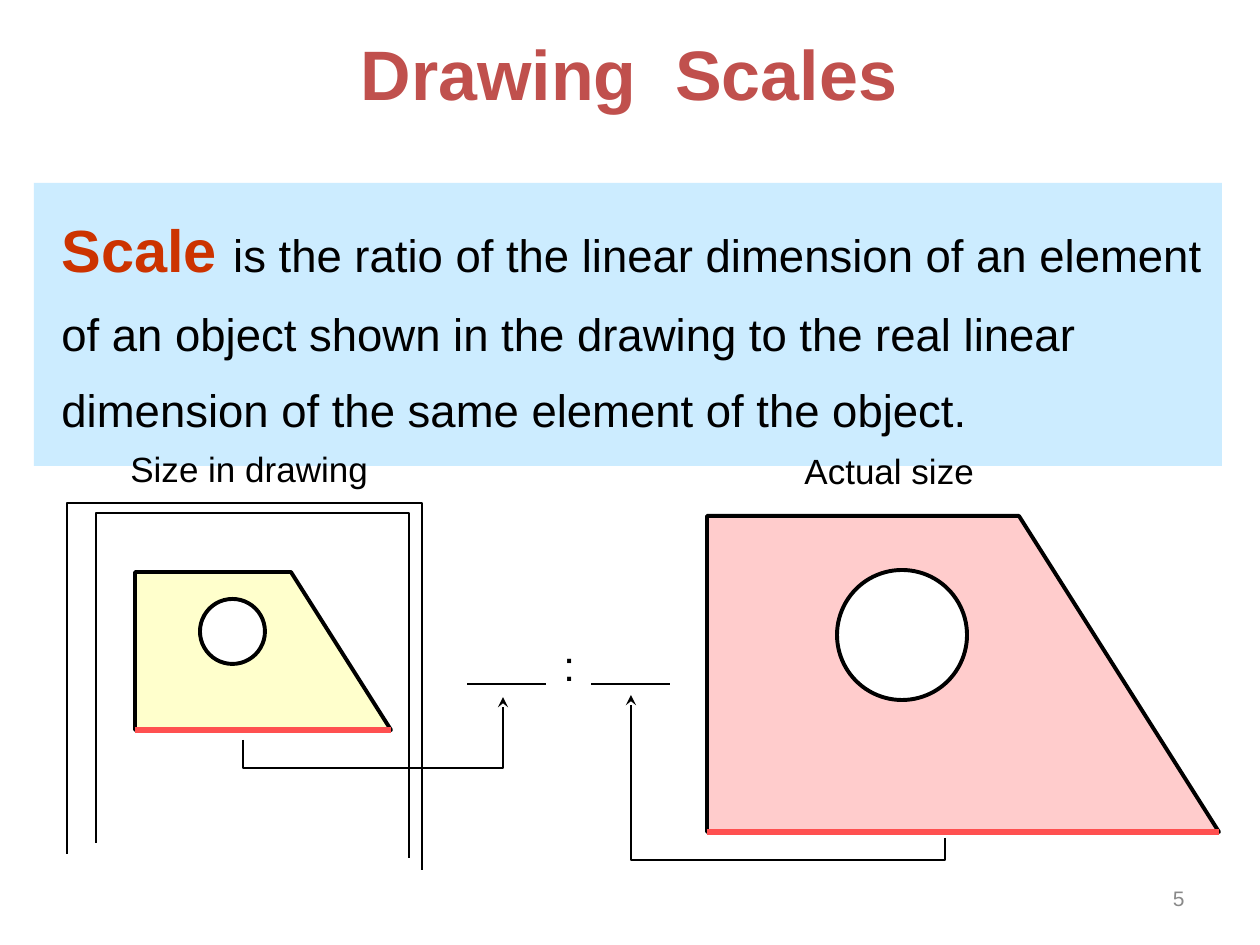
from pptx import Presentation
from pptx.dml.color import RGBColor
from pptx.enum.shapes import MSO_CONNECTOR, MSO_SHAPE
from pptx.enum.text import MSO_ANCHOR, MSO_AUTO_SIZE, PP_ALIGN
from pptx.oxml.ns import qn
from pptx.util import Pt
from lxml.etree import SubElement

SCALE = 914400 / 126  # EMU in one px
FONT = "Arial"

BLACK = RGBColor(0x00, 0x00, 0x00)
WHITE = RGBColor(0xFF, 0xFF, 0xFF)
TITLE_RED = RGBColor(0xC0, 0x50, 0x4D)
TERM_RED = RGBColor(0xCC, 0x33, 0x00)
EDGE_RED = RGBColor(0xFF, 0x50, 0x50)
BAND_BLUE = RGBColor(0xCC, 0xEC, 0xFF)
YELLOW = RGBColor(0xFF, 0xFF, 0xCC)
PINK = RGBColor(0xFF, 0xCC, 0xCC)
GREY = RGBColor(0x89, 0x89, 0x89)

# Content: each paragraph is a list of (text, size, colour, bold) runs
TITLE = [[("Drawing  Scales", 40, TITLE_RED, True)]]
DEFINITION = [
    [("Scale ", 34, TERM_RED, True),
     ("is the ratio of the linear dimension of an element", 26, BLACK, False)],
    [("of an object shown in the drawing to the real linear", 26, BLACK, False)],
    [("dimension of the same element of the object.", 26, BLACK, False)],
]
LABELS = [  # text, size, box
    ("Size in drawing", 20, (118, 441, 263, 55)),
    ("Actual size", 20, (792, 443, 194, 55)),
    (":", 24, (551, 633, 37, 63)),
]
PAGE_NUMBER = [[("5", 12, GREY, False)]]

SHEET_LINES = [
    [(67, 854), (67, 503), (422, 503), (422, 870)],
    [(96, 843), (96, 513), (409, 513), (409, 858)],
]
PARTS = [  # left, top, magnification, fill
    (707, 516, 2, PINK),
    (135, 572, 1, YELLOW),
]
PART_OUTLINE = [(0, 0), (156, 0), (256, 158), (0, 158)]
HOLE = (65, 27, 65)  # left, top, diameter inside the part
BLANKS = [(467, 546), (591, 670)]
BLANK_Y = 684
ARROWS = [
    [(243, 740), (243, 768), (503, 768), (503, 697)],
    [(945, 838), (945, 860), (631, 860), (631, 695)],
]


def px(*lengths):
    return [round(length * SCALE) for length in lengths]


def write_text(holder, paragraphs, align=PP_ALIGN.LEFT, anchor=MSO_ANCHOR.TOP,
               spacing=None, wrap=False):
    frame = holder.text_frame
    frame.auto_size = MSO_AUTO_SIZE.NONE
    frame.word_wrap = wrap
    frame.vertical_anchor = anchor
    for index, runs in enumerate(paragraphs):
        paragraph = frame.add_paragraph() if index else frame.paragraphs[0]
        paragraph.alignment = align
        if spacing:
            paragraph.line_spacing = spacing
        for text, size, color, bold in runs:
            run = paragraph.add_run()
            run.text = text
            run.font.name = FONT
            run.font.size = Pt(size)
            run.font.bold = bold
            run.font.color.rgb = color


def paint(shape, fill=None, line=None, width=1.5, arrow=False):
    shape.shadow.inherit = False
    if fill is None:
        shape.fill.background()
    else:
        shape.fill.solid()
        shape.fill.fore_color.rgb = fill
    if line is None:
        shape.line.fill.background()
        return
    shape.line.color.rgb = line
    shape.line.width = Pt(width)
    outline = shape.line._get_or_add_ln()
    SubElement(outline, qn("a:round"))
    if arrow:
        SubElement(outline, qn("a:tailEnd"), type="stealth")


def add_path(shapes, points, close=False, **style):
    corners = [px(*point) for point in points]
    builder = shapes.build_freeform(*corners[0])
    builder.add_line_segments(corners[1:], close=close)
    paint(builder.convert_to_shape(), **style)


def add_line(shapes, start, end, color, width):
    line = shapes.add_connector(MSO_CONNECTOR.STRAIGHT, *px(*start, *end))
    line.line.color.rgb = color
    line.line.width = Pt(width)
    SubElement(line._element.spPr, qn("a:effectLst"))


def add_part(shapes, left, top, factor, fill):
    corners = [(left + x * factor, top + y * factor) for x, y in PART_OUTLINE]
    add_path(shapes, corners, close=True, fill=fill, line=BLACK, width=2.25)
    x, y, diameter = (length * factor for length in HOLE)
    hole = shapes.add_shape(MSO_SHAPE.OVAL,
                            *px(left + x, top + y, diameter, diameter))
    paint(hole, fill=WHITE, line=BLACK, width=2.25)
    # The measured edge along the bottom
    add_line(shapes, corners[3], corners[2], EDGE_RED, 3)


def main():
    deck = Presentation()
    deck.slide_width, deck.slide_height = px(1260, 945)
    slide = deck.slides.add_slide(deck.slide_layouts[5])
    shapes = slide.shapes

    # Title
    title = shapes.title
    title.left, title.top, title.width, title.height = px(36, 23, 1186, 100)
    write_text(title, TITLE, align=PP_ALIGN.CENTER,
               anchor=MSO_ANCHOR.MIDDLE, wrap=True)

    # Definition on its band
    band = shapes.add_shape(MSO_SHAPE.RECTANGLE, *px(34, 183, 1188, 283))
    paint(band, fill=BAND_BLUE)
    definition = shapes.add_textbox(*px(49, 178, 1167, 266))
    write_text(definition, DEFINITION, spacing=1.4)

    # Labels and the ratio colon
    for text, size, box in LABELS:
        write_text(shapes.add_textbox(*px(*box)), [[(text, size, BLACK, False)]])

    # Drawing sheet, then the part at both sizes
    for points in SHEET_LINES:
        add_path(shapes, points, line=BLACK)
    for part in PARTS:
        add_part(shapes, *part)

    # Ratio blanks and the arrows that lead to them
    for left, right in BLANKS:
        add_line(shapes, (right, BLANK_Y), (left, BLANK_Y), BLACK, 0.75)
    for points in ARROWS:
        add_path(shapes, points, line=BLACK, arrow=True)

    # Page number
    number = shapes.add_textbox(*px(903, 873, 294, 50))
    write_text(number, PAGE_NUMBER, align=PP_ALIGN.RIGHT,
               anchor=MSO_ANCHOR.MIDDLE, wrap=True)

    deck.save("out.pptx")


if __name__ == "__main__":
    main()
